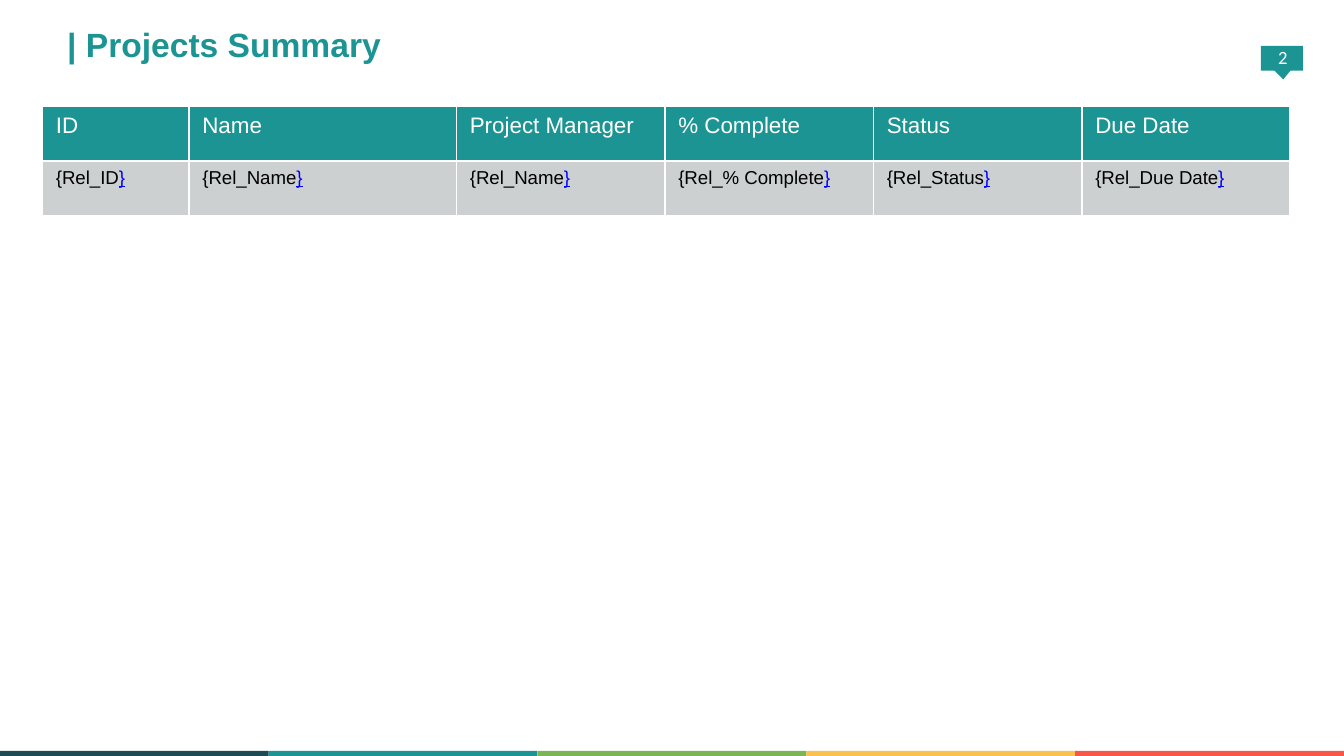
from lxml.etree import SubElement
from pptx import Presentation
from pptx.dml.color import RGBColor
from pptx.enum.shapes import MSO_SHAPE
from pptx.enum.text import MSO_ANCHOR, PP_ALIGN
from pptx.oxml.ns import qn
from pptx.util import Pt

WHITE = RGBColor(0xFF, 0xFF, 0xFF)
BLACK = RGBColor(0x00, 0x00, 0x00)
BLUE = RGBColor(0x00, 0x00, 0xFF)
GREY = RGBColor(0xCD, 0xD0, 0xD1)
NAVY = RGBColor(0x1D, 0x4A, 0x53)
TEAL = RGBColor(0x1C, 0x94, 0x94)
GREEN = RGBColor(0x7C, 0xB5, 0x54)
YELLOW = RGBColor(0xFA, 0xC1, 0x4D)
RED = RGBColor(0xF9, 0x56, 0x47)

WIDTH, HEIGHT = 720, 405
STRIPES = [NAVY, TEAL, GREEN, YELLOW, RED]

# Heading, field placeholder and width of each column
COLUMNS = [
    ("ID", "{Rel_ID", 78.5),
    ("Name", "{Rel_Name", 143.3),
    ("Project Manager", "{Rel_Name", 111.7),
    ("% Complete", "{Rel_% Complete", 111.7),
    ("Status", "{Rel_Status", 111.7),
    ("Due Date", "{Rel_Due Date", 111.7),
]
ROW_HEIGHT = 29.2

TITLE = {"name": "Arial", "size": Pt(18), "bold": True, "color": TEAL}
NUMBER = {"name": "Calibri", "size": Pt(10), "color": WHITE}
HEADING = {"name": "Arial", "size": Pt(12), "bold": False, "color": WHITE}
FIELD = {"name": "Arial", "size": Pt(10), "bold": False, "color": BLACK}
BRACE = {**FIELD, "color": BLUE, "underline": True}


def add_span(para, text, style):
    span = para.add_run()
    span.text = text
    for key, value in style.items():
        if key == "color":
            span.font.color.rgb = value
        else:
            setattr(span.font, key, value)


def add_block(page, kind, area, color, rotation=0):
    block = page.shapes.add_shape(kind, *map(Pt, area))
    block.shadow.inherit = False
    block.fill.solid()
    block.fill.fore_color.rgb = color
    block.line.fill.background()
    block.rotation = rotation


def add_text(page, area, text, style, layout, align=PP_ALIGN.LEFT):
    frame = page.shapes.add_textbox(*map(Pt, area)).text_frame
    for key, value in layout.items():
        setattr(frame, key, value)
    para = frame.paragraphs[0]
    para.alignment = align
    add_span(para, text, style)


def format_cell(cell, color, spans):
    # Borders come before the fill in the cell properties
    properties = cell._tc.get_or_add_tcPr()
    for side in ("a:lnL", "a:lnR", "a:lnT", "a:lnB"):
        line = SubElement(properties, qn(side), w=str(Pt(1)))
        fill = SubElement(line, qn("a:solidFill"))
        SubElement(fill, qn("a:srgbClr"), val=str(WHITE))
    cell.fill.solid()
    cell.fill.fore_color.rgb = color
    for text, style in spans:
        add_span(cell.text_frame.paragraphs[0], text, style)


def add_projects_table(page, left, top):
    width = sum(column[2] for column in COLUMNS)
    area = (left, top, width, 2 * ROW_HEIGHT)
    table = page.shapes.add_table(2, len(COLUMNS), *map(Pt, area)).table
    for index, (heading, field, column_width) in enumerate(COLUMNS):
        table.columns[index].width = Pt(column_width)
        format_cell(table.cell(0, index), TEAL, [(heading, HEADING)])
        format_cell(table.cell(1, index), GREY, [(field, FIELD), ("}", BRACE)])


def main():
    deck = Presentation()
    deck.slide_width, deck.slide_height = Pt(WIDTH), Pt(HEIGHT)
    page = deck.slides.add_slide(deck.slide_layouts[6])

    # Colour stripes along the bottom edge
    stripe = WIDTH / len(STRIPES)
    for index, color in enumerate(STRIPES):
        area = (index * stripe, 402.3, stripe, 5.8)
        add_block(page, MSO_SHAPE.RECTANGLE, area, color)

    # Page number flag
    add_block(page, MSO_SHAPE.RECTANGLE, (675.5, 24.6, 22.5, 13.3), TEAL)
    add_block(page, MSO_SHAPE.ISOSCELES_TRIANGLE, (676, 30.3, 22.3, 12.2), TEAL, 176.8)
    number_layout = {
        "word_wrap": True, "vertical_anchor": MSO_ANCHOR.MIDDLE,
        "margin_left": 0, "margin_top": 0, "margin_right": 0, "margin_bottom": Pt(3.6),
    }
    add_text(page, (676.8, 21.6, 20.9, 21.6), "2", NUMBER, number_layout, PP_ALIGN.CENTER)

    # Title
    title_layout = {
        "word_wrap": True, "vertical_anchor": MSO_ANCHOR.TOP,
        "margin_left": 0, "margin_top": 0, "margin_right": Pt(7.2), "margin_bottom": 0,
    }
    add_text(page, (36, 13, 540.7, 28.8), "| Projects Summary", TITLE, title_layout)

    # Projects table
    add_projects_table(page, 22.7, 57)

    deck.save("out.pptx")


if __name__ == "__main__":
    main()
